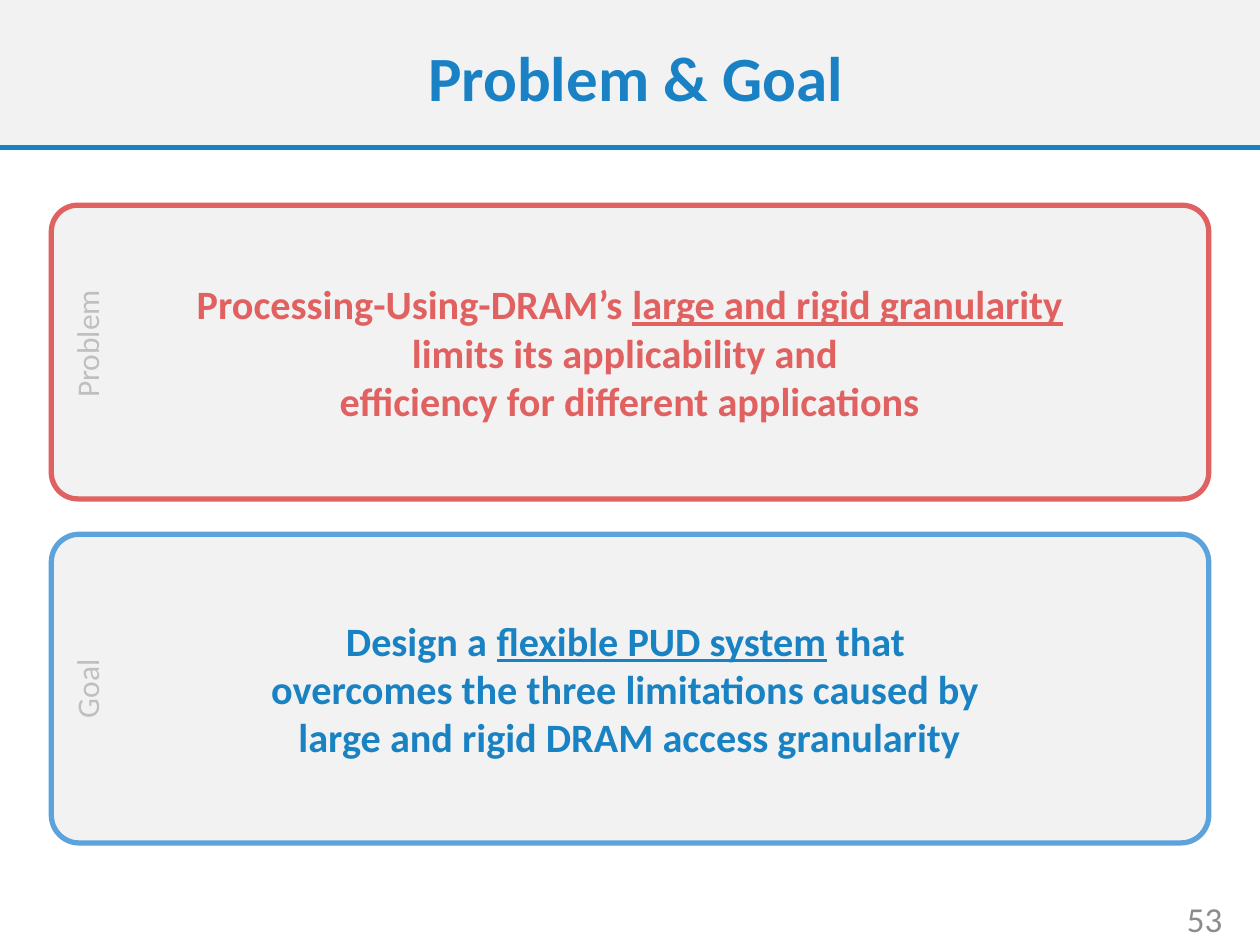
from dataclasses import dataclass

from lxml.etree import SubElement
from pptx import Presentation
from pptx.dml.color import RGBColor
from pptx.enum.shapes import MSO_CONNECTOR, MSO_SHAPE
from pptx.enum.text import MSO_ANCHOR, PP_ALIGN
from pptx.oxml.ns import qn
from pptx.util import Pt


@dataclass(frozen=True)
class Theme:
    font: str = "Calibri"
    panel: str = "F2F2F2"
    blue: str = "1982C3"
    title_blue: str = "1A82C4"
    goal_border: str = "5CA2DB"
    problem_border: str = "E06161"
    problem_text: str = "E16161"
    label: str = "BFBFBF"
    page_number: str = "8C8C8C"
    title_size: float = 36
    statement_size: float = 23
    page_size: float = 20
    label_size: float = 18
    line_width: float = 3


THEME = Theme()
WIDTH, HEIGHT = 720, 540


def rgb(color):
    return RGBColor.from_string(color)


def add_run(paragraph, wording, size, color, bold=None, underline=None):
    run = paragraph.add_run()
    run.text = wording
    font = run.font
    font.name, font.size, font.bold, font.underline = THEME.font, Pt(size), bold, underline
    font.color.rgb = rgb(color)


def first_paragraph(holder, align, anchor=MSO_ANCHOR.MIDDLE):
    frame = holder.text_frame
    frame.word_wrap = True
    frame.vertical_anchor = anchor
    paragraph = frame.paragraphs[0]
    paragraph.alignment = align
    return paragraph


def add_panel(slide, kind, box, border=None):
    """Add a grey shape, outlined only when a border colour is given."""
    panel = slide.shapes.add_shape(kind, *map(Pt, box))
    panel.shadow.inherit = False
    panel.fill.solid()
    panel.fill.fore_color.rgb = rgb(THEME.panel)
    if border:
        panel.line.color.rgb = rgb(border)
        panel.line.width = Pt(THEME.line_width)
    else:
        panel.line.fill.background()
    return panel


def add_header(slide, box, title):
    left, top, width, height = box
    add_panel(slide, MSO_SHAPE.RECTANGLE, box)
    bottom = top + height
    rule = slide.shapes.add_connector(
        MSO_CONNECTOR.STRAIGHT, Pt(left), Pt(bottom), Pt(left + width), Pt(bottom))
    rule.line.color.rgb = rgb(THEME.blue)
    rule.line.width = Pt(THEME.line_width)
    SubElement(rule.element.spPr, qn("a:effectLst"))

    heading = slide.shapes.add_textbox(
        Pt(left + 13), Pt(top + 10), Pt(width - 19.5), Pt(height - 11.5))
    paragraph = first_paragraph(heading, PP_ALIGN.CENTER)
    paragraph.line_spacing = 0.9
    add_run(paragraph, title, THEME.title_size, THEME.title_blue, bold=True)


def add_statement(slide, box, label, label_rise, lines, border, color):
    """Add a rounded card; each line is a list of (wording, underlined) runs."""
    left, top, width, height = box
    card = add_panel(slide, MSO_SHAPE.ROUNDED_RECTANGLE, box, border)
    card.adjustments[0] = 0.09
    paragraph = first_paragraph(card, PP_ALIGN.CENTER)
    for index, line in enumerate(lines):
        if index:
            paragraph.add_line_break()
        for wording, underlined in line:
            add_run(paragraph, wording, THEME.statement_size, color, True, underlined)

    thickness = 29
    center_x, center_y = left + 20.3, top + height / 2 - label_rise
    side_label = slide.shapes.add_textbox(
        Pt(center_x - height / 2), Pt(center_y - thickness / 2), Pt(height), Pt(thickness))
    side_label.rotation = 270
    add_run(first_paragraph(side_label, PP_ALIGN.CENTER, MSO_ANCHOR.TOP),
            label, THEME.label_size, THEME.label)


def add_page_number(slide, box, number):
    footer = slide.shapes.add_textbox(*map(Pt, box))
    add_run(first_paragraph(footer, PP_ALIGN.RIGHT), number, THEME.page_size, THEME.page_number)


def main():
    deck = Presentation()
    deck.slide_width, deck.slide_height = Pt(WIDTH), Pt(HEIGHT)
    slide = deck.slides.add_slide(deck.slide_layouts[6])

    add_header(slide, (0, 0, WIDTH, 84.2), "Problem & Goal")
    add_page_number(slide, (627.8, 510.5, 77.8, 28.8), "53")

    margin = 29.3
    card_width = WIDTH - 2 * margin
    add_statement(
        slide, (margin, 117.3, card_width, 167.8), "Problem", 4.7,
        [[("Processing-Using-DRAM’s ", False), ("large and rigid granularity", True)],
         [("limits its applicability and ", False)],
         [("efficiency for different applications", False)]],
        THEME.problem_border, THEME.problem_text)
    add_statement(
        slide, (margin, 305.3, card_width, 176.4), "Goal", 0,
        [[("Design a ", False), ("flexible PUD system", True), (" that ", False)],
         [("overcomes the three limitations caused by ", False)],
         [("large and rigid DRAM access granularity", False)]],
        THEME.goal_border, THEME.blue)

    deck.save("out.pptx")


if __name__ == "__main__":
    main()
